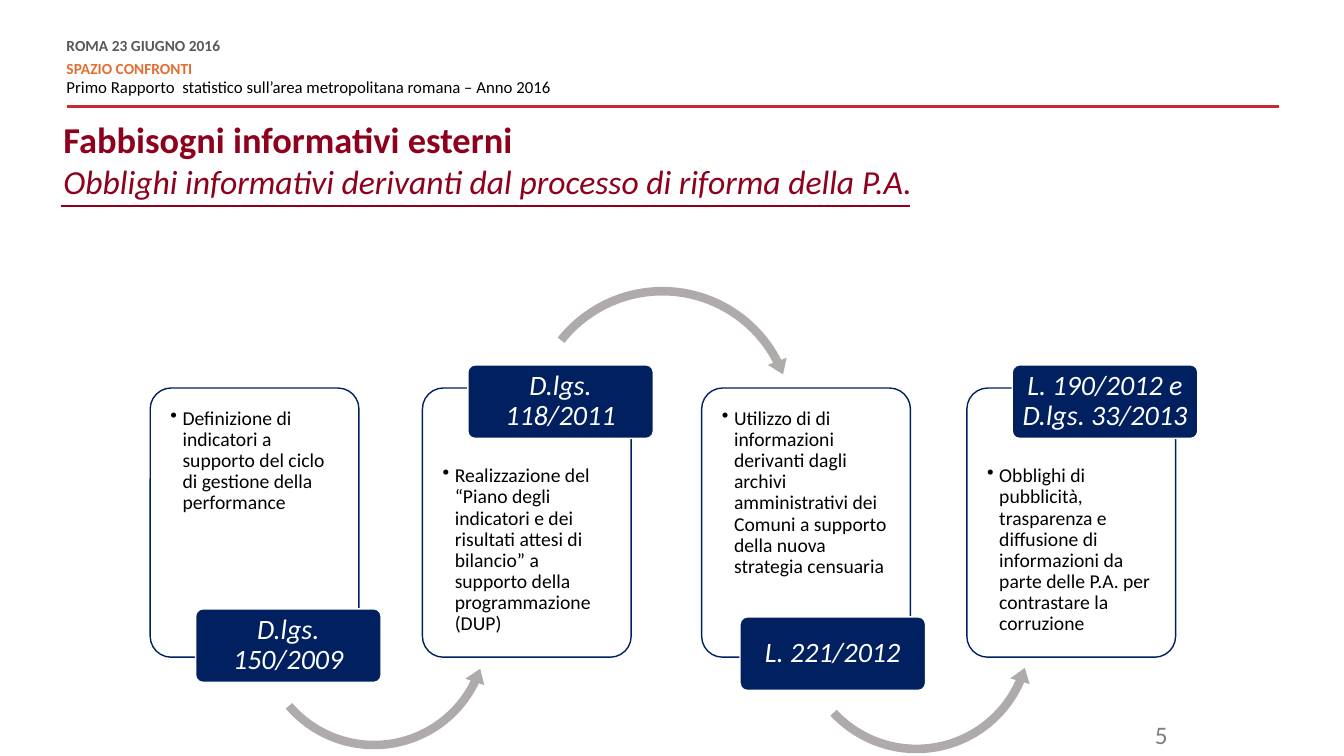
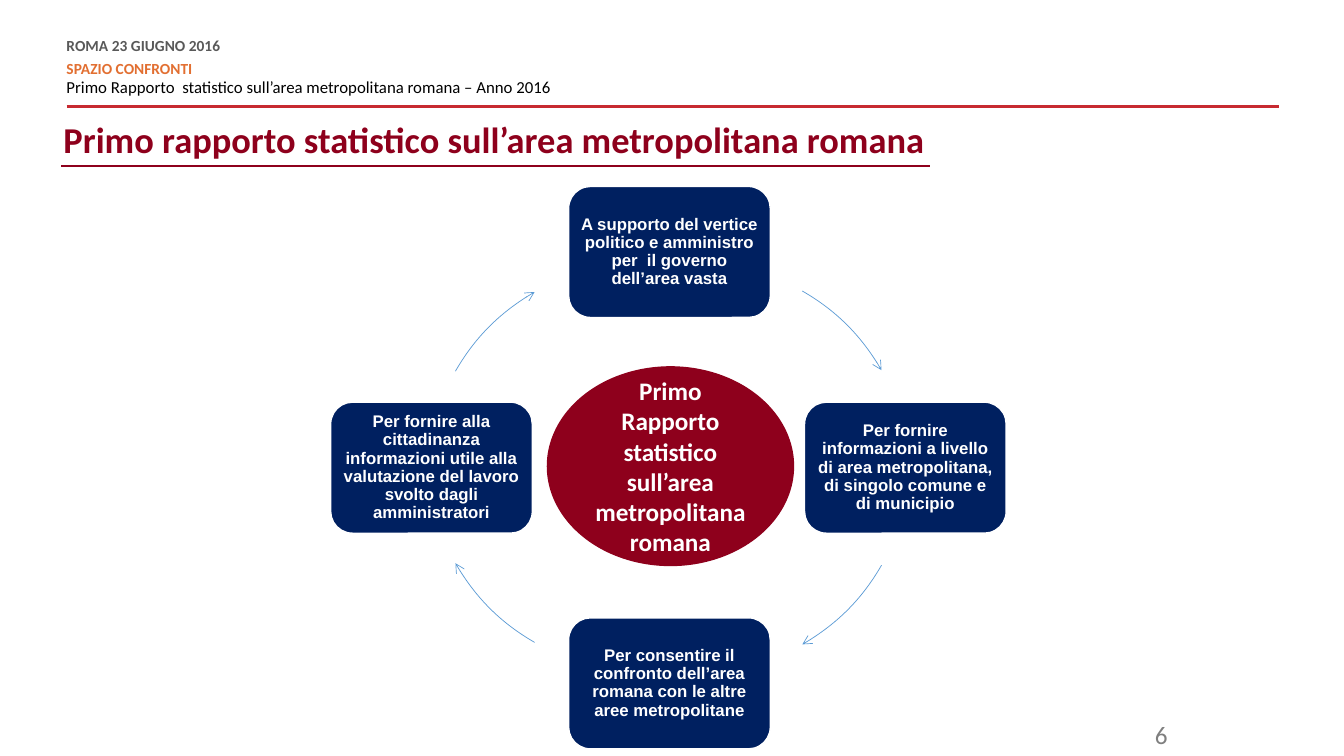
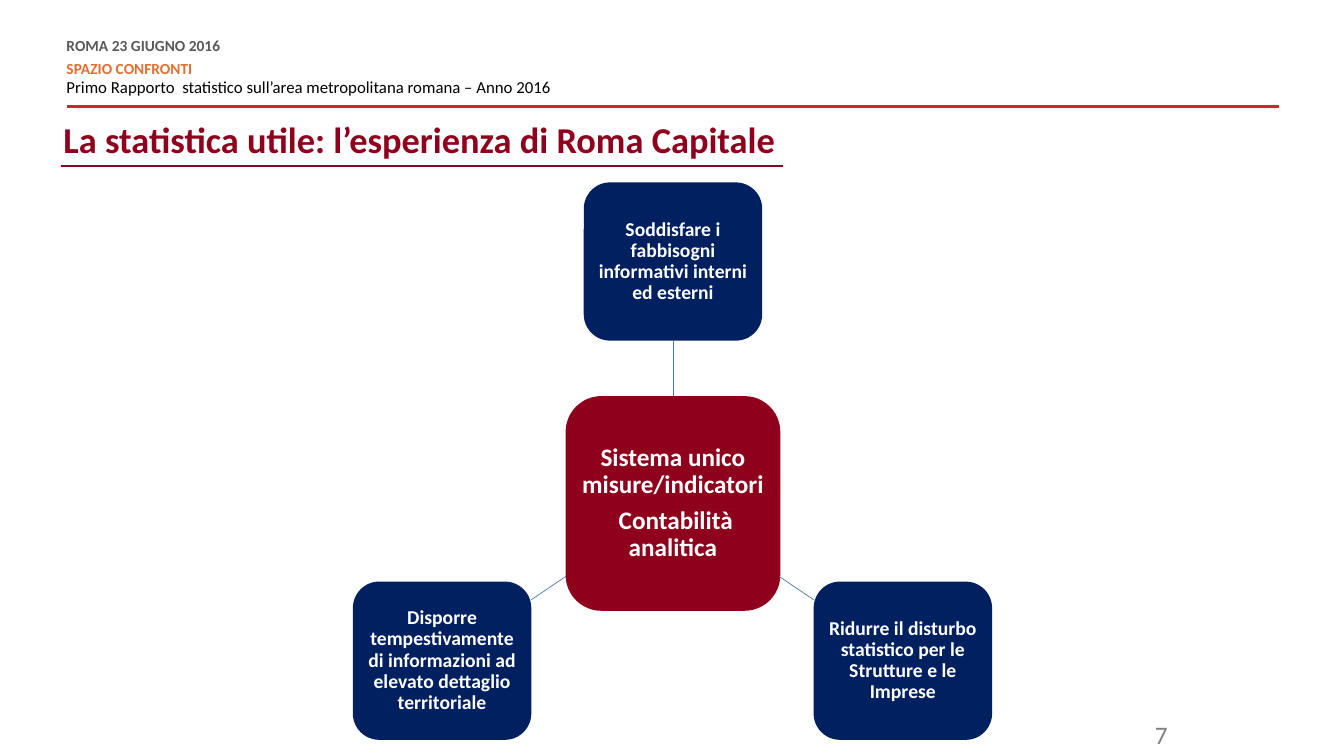
import pptx
import pptx.util
import pptx.dml.color
import pptx.enum.shapes
import pptx.enum.text
import pptx.oxml.ns
from lxml import etree

Inches, Pt = pptx.util.Inches, pptx.util.Pt
RGBColor = pptx.dml.color.RGBColor
SHAPE = pptx.enum.shapes.MSO_SHAPE
STRAIGHT = pptx.enum.shapes.MSO_CONNECTOR.STRAIGHT
ALIGN = pptx.enum.text.PP_ALIGN
ANCHOR = pptx.enum.text.MSO_ANCHOR
qn = pptx.oxml.ns.qn

NAVY = RGBColor(0x00, 0x20, 0x60)
WINE = RGBColor(0x8E, 0x00, 0x1C)
RED = RGBColor(0xC7, 0x2A, 0x31)
ORANGE = RGBColor(0xE2, 0x6F, 0x31)
DARK_GRAY = RGBColor(0x59, 0x59, 0x59)
MID_GRAY = RGBColor(0x7F, 0x7F, 0x7F)
ARROW_GRAY = RGBColor(0xAF, 0xAB, 0xAB)
ARC_BLUE = RGBColor(0x5B, 0x9B, 0xD5)
SPOKE_BLUE = RGBColor(0x49, 0x7C, 0xAB)
WHITE = RGBColor(0xFF, 0xFF, 0xFF)
BLACK = RGBColor(0x00, 0x00, 0x00)

DEG = 0.6  # one degree in shape adjustment units


def write(tf, lines, align=ALIGN.CENTER, spacing=0.9, font="Calibri"):
    """Fill a frame with (text, size, colour, bold, italic) paragraphs."""
    tf.word_wrap = True
    tf.text = "\n".join(line[0] for line in lines)
    for p, (_, size, color, bold, italic) in zip(tf.paragraphs, lines):
        p.alignment = align
        p.line_spacing = spacing
        f = p.runs[0].font
        f.name, f.size, f.bold, f.italic = font, Pt(size), bold, italic
        f.color.rgb = color


def box(s, kind, x, y, w, h, fill=None, line=None, inset=0.05, adj=()):
    sp = s.shapes.add_shape(kind, Inches(x), Inches(y), Inches(w), Inches(h))
    sp.shadow.inherit = False
    for i, value in enumerate(adj):
        sp.adjustments[i] = value
    if fill is None:
        sp.fill.background()
    else:
        sp.fill.solid()
        sp.fill.fore_color.rgb = fill
    if line is None:
        sp.line.fill.background()
    else:
        sp.line.color.rgb = line
        sp.line.width = Pt(1)
    tf = sp.text_frame
    tf.margin_left = tf.margin_right = Inches(inset)
    tf.margin_top = tf.margin_bottom = Inches(inset)
    tf.vertical_anchor = ANCHOR.MIDDLE
    return sp


prs = pptx.Presentation()
prs.slide_width, prs.slide_height = Inches(13.33), Inches(7.5)

# Shared header, title, underline and page number
titles = [
    (["Fabbisogni informativi esterni",
      "Obblighi informativi derivanti dal processo di riforma della P.A."], 2.04, 9.03),
    (["Primo rapporto statistico sull’area metropolitana romana"], 1.65, 9.22),
    (["La statistica utile: l’esperienza di Roma Capitale"], 1.65, 7.77),
]
for number, (title, rule_y, rule_end) in enumerate(titles, start=5):
    s = prs.slides.add_slide(prs.slide_layouts[6])

    tf = s.shapes.add_textbox(Inches(0.66), Inches(0.39), Inches(5.2), Inches(0.59)).text_frame
    tf.margin_left = tf.margin_right = tf.margin_top = tf.margin_bottom = 0
    write(tf, [
        ("ROMA 23 GIUGNO 2016", 11, DARK_GRAY, True, False),
        ("SPAZIO CONFRONTI", 11, ORANGE, True, False),
        ("Primo Rapporto  statistico sull’area metropolitana romana – Anno 2016",
         12, BLACK, False, False),
    ], ALIGN.LEFT, Pt(10.8))
    tf.paragraphs[0].space_after = Pt(6)
    tf.paragraphs[2].space_before = Pt(3)

    tf = s.shapes.add_textbox(Inches(0.33), Inches(1.11), Inches(12.34),
                              Inches(rule_y - 1.11)).text_frame
    tf.margin_left = Inches(0.3)
    styles = [(26, WINE, True, False), (24, WINE, False, True)]
    write(tf, [(text, *style) for text, style in zip(title, styles)], ALIGN.LEFT, 1.0)

    tf = s.shapes.add_textbox(Inches(10.5), Inches(7.09), Inches(1.18), Inches(0.35)).text_frame
    write(tf, [(str(number), 18, MID_GRAY, False, False)], ALIGN.RIGHT, 1.0)

    for x1, x2, y, color, width in [(0.66, 12.69, 1.06, RED, 2),
                                    (0.61, rule_end, rule_y, WINE, 1.5)]:
        rule = s.shapes.add_connector(STRAIGHT, Inches(x1), Inches(y), Inches(x2), Inches(y))
        rule.line.color.rgb = color
        rule.line.width = Pt(width)

# Slide 5: four laws, each a card with a tag at its foot or head
s = prs.slides[0]
LEFT_ARROW, RIGHT_ARROW = SHAPE.LEFT_CIRCULAR_ARROW, SHAPE.CIRCULAR_ARROW
# card x, tag y, tag text, card text,
# arrow: kind, x, y, size, thickness %, head angle, end angle, start angle, head %
laws = [
    (1.49, 6.04, "D.lgs. 150/2009",
     "Definizione di indicatori a supporto del ciclo di gestione della performance",
     (LEFT_ARROW, 2.5, 5.07, 2.42, 3.5, 7.28, 25.88, 139.42, 4.1)),
    (4.19, 3.62, "D.lgs. 118/2011",
     "Realizzazione del “Piano degli indicatori e dei risultati attesi di bilancio” "
     "a supporto della programmazione (DUP)",
     (RIGHT_ARROW, 5.19, 2.79, 2.76, 3.1, 6.32, 332.83, 218.33, 3.6)),
    (6.96, 6.12, "L. 221/2012",
     "Utilizzo di di informazioni derivanti dagli archivi amministrativi dei Comuni "
     "a supporto della nuova strategia censuaria",
     (LEFT_ARROW, 7.87, 5.09, 2.44, 3.5, 7.22, 23.61, 137.21, 4.1)),
    (9.59, 3.62, "L. 190/2012 e D.lgs. 33/2013",
     "Obblighi di pubblicità, trasparenza e diffusione di informazioni da parte delle P.A. "
     "per contrastare la corruzione", None),
]
for i, (x, tag_y, law, duty, arrow) in enumerate(laws):
    card = box(s, SHAPE.ROUNDED_RECTANGLE, x, 3.85, 2.07, 2.67, WHITE, NAVY, 0.14, [0.1])
    tf = card.text_frame
    tf.vertical_anchor = ANCHOR.TOP
    if tag_y < 3.85:
        tf.margin_top = Inches(0.71)
    write(tf, [(duty, 14, BLACK, False, False)], ALIGN.LEFT)
    pPr = tf.paragraphs[0]._p.get_or_add_pPr()
    pPr.set("marL", str(Inches(0.12)))
    pPr.set("indent", str(-Inches(0.12)))
    etree.SubElement(pPr, qn("a:buChar")).set("char", "•")

    if arrow:
        kind, ax, ay, size, thick, head_angle, end, start, head = arrow
        box(s, kind, ax, ay, size, size, ARROW_GRAY,
            adj=[thick / 100, head_angle * DEG, end * DEG, start * DEG, head / 100])

    tag_x = 4.64 + (i - 1) * 2.7
    tag = box(s, SHAPE.ROUNDED_RECTANGLE, tag_x, tag_y, 1.84, 0.73, NAVY, WHITE, 0.04, [0.1])
    write(tag.text_frame, [(law, 20, WHITE, False, True)])

# Slide 6: cycle of four purposes around the report
s = prs.slides[1]
# box x, y, text, then x, y and start angle of the arc that follows
purposes = [
    (5.64, 1.85, "A supporto del vertice politico e amministro per  il governo dell’area vasta",
     4.74, 2.6, 300),
    (7.98, 3.99, "Per fornire informazioni a livello di area metropolitana, "
     "di singolo comune e di municipio", 4.74, 2.39, 30),
    (5.64, 6.13, "Per consentire il confronto dell’area romana con le altre aree metropolitane",
     4.23, 2.37, 120),
    (3.28, 3.99, "Per fornire alla cittadinanza informazioni utile alla valutazione "
     "del lavoro svolto dagli amministratori", 4.23, 2.61, 210),
]
for x, y, text, arc_x, arc_y, start in purposes:
    sp = box(s, SHAPE.ROUNDED_RECTANGLE, x, y, 2, 1.3, NAVY, WHITE)
    write(sp.text_frame, [(text, 12, WHITE, True, False)], font="Arial")
    arc = box(s, SHAPE.ARC, arc_x, arc_y, 4.29, 4.29, line=ARC_BLUE,
              adj=[start * DEG, (start + 30) * DEG])
    arc.line.width = Pt(0.5)
    etree.SubElement(arc.line._get_or_add_ln(), qn("a:tailEnd")).set("type", "arrow")

report = box(s, SHAPE.FLOWCHART_CONNECTOR, 5.43, 3.64, 2.44, 1.97, WINE, WINE, 0.1)
write(report.text_frame, [("Primo Rapporto statistico sull’area metropolitana romana",
                           18, WHITE, True, False)], spacing=1.0)

# Slide 7: single system with three goals
s = prs.slides[2]
hub = box(s, SHAPE.ROUNDED_RECTANGLE, 5.61, 3.93, 2.13, 2.13, WINE)
write(hub.text_frame, [("Sistema unico misure/indicatori ", 18, WHITE, True, False),
                       (" Contabilità analitica", 18, WHITE, True, False)])
hub.text_frame.paragraphs[0].space_after = Pt(6.3)

# box x, y, text, then the ends of its spoke
goals = [
    (5.79, 1.81, "Soddisfare i fabbisogni informativi interni ed esterni",
     (6.67, 3.93, 6.67, 3.38)),
    (8.07, 5.77, "Ridurre il disturbo statistico per le Strutture e le Imprese",
     (7.73, 5.72, 8.07, 5.95)),
    (3.5, 5.77, "Disporre tempestivamente di informazioni ad elevato dettaglio territoriale",
     (5.61, 5.72, 5.27, 5.95)),
]
for x, y, text, ends in goals:
    goal = box(s, SHAPE.ROUNDED_RECTANGLE, x, y, 1.77, 1.57, NAVY, inset=0.04)
    write(goal.text_frame, [(text, 14, WHITE, True, False)])
    spoke = s.shapes.add_connector(STRAIGHT, *[Inches(v) for v in ends])
    spoke.line.color.rgb = SPOKE_BLUE
    spoke.line.width = Pt(0.5)
    if y < 3.93:
        spoke.begin_connect(hub, 0)
        spoke.end_connect(goal, 2)

# Connectors without shadow
for s in prs.slides:
    for sp in s.shapes:
        if sp.shape_type == pptx.enum.shapes.MSO_SHAPE_TYPE.LINE:
            etree.SubElement(sp._element.spPr, qn("a:effectLst"))

prs.save("out.pptx")
